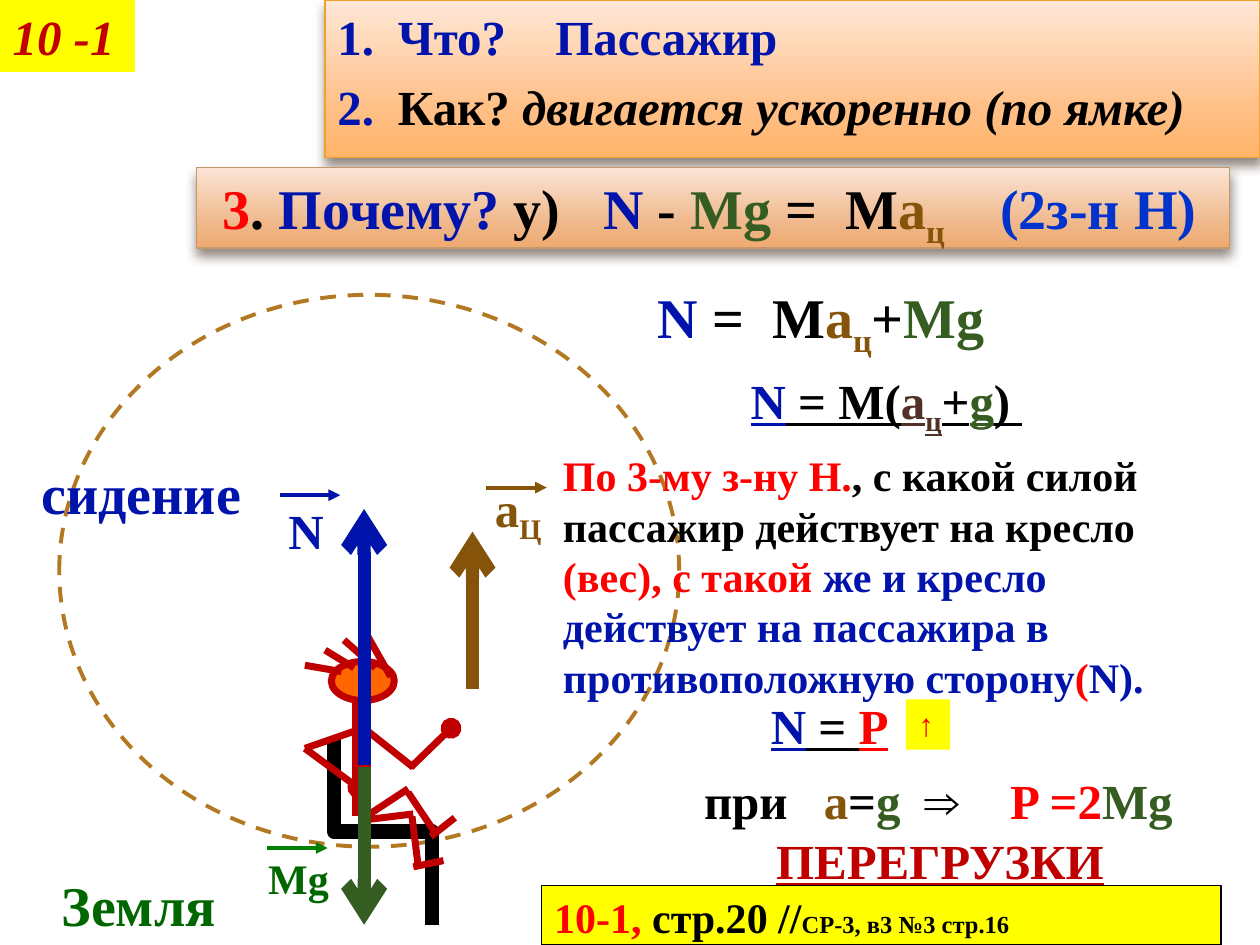
from lxml.etree import SubElement
from pptx import Presentation
from pptx.dml.color import RGBColor
from pptx.enum.dml import MSO_LINE
from pptx.enum.shapes import MSO_CONNECTOR, MSO_SHAPE
from pptx.enum.text import MSO_ANCHOR, PP_ALIGN
from pptx.oxml import parse_xml
from pptx.oxml.ns import nsdecls, qn
from pptx.util import Inches, Pt

FONT = "Times New Roman"
BLUE, RED, DARK, BLACK = "0014AC", "FF0000", "C00000", "000000"
GREEN, LEAF, BROWN, YELLOW = "365D21", "006600", "85540A", "FFFF00"
SUB, ITALIC, UNDER = {"sub": True}, {"italic": True}, {"underline": True}


def color(value):
    return RGBColor.from_string(value)


def stroke(line, tint, width):
    line.color.rgb = color(tint)
    line.width = Pt(width)


def write(shape, paras, size, wrap=True, tabs=(), align=PP_ALIGN.LEFT, gap=0):
    """Fill a frame with paragraphs made of (text, colour, formats) runs."""
    frame = shape.text_frame
    frame.word_wrap = wrap
    frame.vertical_anchor = MSO_ANCHOR.TOP
    for i, runs in enumerate(paras):
        para = frame.paragraphs[0] if i == 0 else frame.add_paragraph()
        para.alignment = align
        if i and gap:
            para.space_before = Pt(gap)
        if tabs:
            stops = SubElement(para._p.get_or_add_pPr(), qn("a:tabLst"))
            for stop in tabs:
                SubElement(stops, qn("a:tab"), pos=str(Inches(stop)), algn="l")
        for words, tint, *extra in runs:
            run = para.add_run()
            run.text = words
            look = {"name": FONT, "size": Pt(size), "bold": True}
            look.update(extra[0] if extra else {})
            if look.pop("sub", False):
                run._r.get_or_add_rPr().set("baseline", "-25000")
            for key, value in look.items():
                setattr(run.font, key, value)
            run.font.color.rgb = color(tint)


def label(slide, box, paras, size, **style):
    shape = slide.shapes.add_textbox(*map(Inches, box))
    write(shape, paras, size, **style)


def form(slide, kind, box, fill=None, line=None, width=1):
    shape = slide.shapes.add_shape(kind, *map(Inches, box))
    shape.shadow.inherit = False
    if fill:
        shape.fill.solid()
        shape.fill.fore_color.rgb = color(fill)
    else:
        shape.fill.background()
    if line:
        stroke(shape.line, line, width)
    else:
        shape.line.fill.background()
    return shape


def panel(slide, box, shades, edge):
    """Rectangle with a vertical three-stop gradient and a soft shadow."""
    shape = form(slide, MSO_SHAPE.RECTANGLE, box, "FFFFFF", edge, 0.79)
    props = shape._element.spPr
    stops = "".join(f'<a:gs pos="{pos}000"><a:srgbClr val="{tint}"/></a:gs>'
                    for pos, tint in zip((0, 72, 100), shades))
    props.replace(props.find(qn("a:solidFill")), parse_xml(
        f'<a:gradFill {nsdecls("a")}><a:gsLst>{stops}</a:gsLst>'
        '<a:lin ang="5400000" scaled="0"/></a:gradFill>'))
    props.find(qn("a:effectLst")).append(parse_xml(
        f'<a:outerShdw {nsdecls("a")} blurRad="{Pt(6)}" dist="{Pt(4)}" '
        'dir="5400000" rotWithShape="0"><a:srgbClr val="4E3B30">'
        '<a:alpha val="60000"/></a:srgbClr></a:outerShdw>'))
    return shape


def link(slide, ends, tint, width, head=None, tail=None,
         kind=MSO_CONNECTOR.STRAIGHT):
    line = slide.shapes.add_connector(kind, *map(Inches, ends))
    stroke(line.line, tint, width)
    pen = line.line._get_or_add_ln()
    for tag, tip in (("a:headEnd", head), ("a:tailEnd", tail)):
        if tip:
            SubElement(pen, qn(tag), type=tip)
    SubElement(line._element.spPr, qn("a:effectLst"))
    return line


def vector(slide, box, runs, size, start, tint):
    """Symbol with a small arrow above it."""
    label(slide, box, [runs], size)
    x, y = start
    link(slide, (x, y, x + 0.48, y), tint, 2.25, tail="triangle")


def rider(slide):
    form(slide, MSO_SHAPE.OVAL, (2.63, 5.25, 0.5, 0.31), "FF6600", DARK, 4)
    link(slide, (2.87, 5.53, 2.87, 6.48), DARK, 10.5)
    # Hands end in a dot
    link(slide, (3.58, 5.78, 3.26, 6.09), DARK, 4, head="oval")
    link(slide, (2.42, 5.94, 2.84, 6.25), DARK, 4, tail="oval")
    limbs = [
        (2.85, 5.79, 2.42, 5.94), (2.89, 5.78, 3.28, 6.09),  # arms
        (2.42, 5.28, 2.71, 5.33), (2.58, 5.16, 2.81, 5.3),  # hair
        (2.73, 5.08, 2.98, 5.3), (2.89, 5, 3.1, 5.37),
        (2.87, 6.51, 3.28, 6.46), (3.27, 6.48, 3.32, 6.88),  # legs
        (3.52, 6.83, 3.28, 6.88), (2.89, 6.49, 3.24, 6.26),
        (3.24, 6.29, 3.46, 6.62), (3.61, 6.49, 3.42, 6.64)]
    for ends in limbs:
        link(slide, ends, DARK, 4)


def scene(slide):
    orbit = form(slide, MSO_SHAPE.OVAL, (0.47, 2.34, 4.92, 4.38),
                 line="B27822", width=2.25)
    orbit.line.dash_style = MSO_LINE.DASH
    # Seat: an elbow turned on its side
    seat = link(slide, (3.78, 6.21, 2.3, 6.99), BLACK, 8.25,
                kind=MSO_CONNECTOR.ELBOW)
    seat._element.spPr.find(qn("a:xfrm")).set("rot", str(270 * 60000))
    rider(slide)


def forces(slide):
    for ends, tint in (((2.89, 6.09, 2.89, 7.34), GREEN),
                       ((2.89, 6.07, 2.89, 4.04), BLUE),
                       ((3.75, 5.47, 3.75, 4.22), BROWN)):
        link(slide, ends, tint, 7.5, tail="arrow")
    vector(slide, (2.03, 6.72, 0.78, 0.5), [("Mg", LEAF)], 24,
           (2.12, 6.73), "008000")
    vector(slide, (2.19, 3.92, 0.78, 0.57), [("N", BLUE)], 28,
           (2.22, 3.93), BLUE)
    vector(slide, (3.83, 3.75, 0.78, 0.57),
           [("а", BROWN), ("Ц", BROWN, SUB)], 28, (3.86, 3.87), BROWN)
    label(slide, (0.39, 6.86, 1.72, 0.64), [[("Земля", LEAF)]], 32)
    label(slide, (0.23, 3.59, 1.95, 0.64), [[("сидение", BLUE)]], 32)


def panels(slide):
    task = panel(slide, (2.58, 0, 7.42, 1.25),
                 ("FFE7D7", "FFBE84", "FFB468"), "F0A22E")
    write(task, [[("1.\tЧто?\tПассажир", BLUE)],
                 [("2.\t", BLUE), ("Как?", BLACK),
                  (" двигается ускоренно (по ямке)", BLACK, ITALIC)]],
          28, tabs=(0.48, 1.73), gap=6.7)
    law = panel(slide, (1.56, 1.33, 8.2, 0.64),
                ("FAE4D5", "EFB688", "EFAA6F"), "C3986D")
    write(law, [[(" 3", RED), (". ", BLACK), ("Почему? ", BLUE),
                 ("y)\t", BLACK), ("N", BLUE), (" - ", BLACK),
                 ("Mg", GREEN), (" =\tM", BLACK), ("a", BROWN),
                 ("ц\t", BROWN, SUB), ("(2з-н Н)", "0033CC")]],
          32, tabs=(3.13, 5.05, 6.28))


def proof(slide):
    label(slide, (5.12, 2.19, 4.22, 0.64),
          [[("N", BLUE), (" =\tM", BLACK), ("a", BROWN), ("ц", BROWN, SUB),
            ("+", BLACK), ("Mg", GREEN)]], 32, tabs=(0.91,))
    label(slide, (5.86, 2.89, 2.5, 0.57),
          [[("N", BLUE, UNDER), (" = M(", BLACK, UNDER),
            ("a", "523227", UNDER), ("ц", "523227", {**SUB, **UNDER}),
            ("+", BLACK, UNDER), ("g", GREEN, UNDER),
            (") ", BLACK, UNDER)]], 28)
    label(slide, (4.37, 3.52, 4.96, 2.12),
          [[("По 3-му з-ну Н.", RED),
            (", с какой силой пассажир действует на кресло ", BLACK),
            ("(вес), с такой ", RED),
            ("же и кресло действует на пассажира в "
             "противоположную сторону", BLUE),
            ("(", RED), ("N).", BLUE)]], 24)
    label(slide, (6.02, 5.47, 1.17, 0.57),
          [[("N", BLUE, UNDER), (" = ", BLACK, UNDER), ("P", RED, UNDER)]], 28)
    rise = form(slide, MSO_SHAPE.RECTANGLE, (7.19, 5.55, 0.35, 0.4), YELLOW)
    write(rise, [[("↑", RED)]], 18, wrap=False)
    # Result: formula on tab stops, centred word below it
    box = (5.31, 6.07, 4.3, 0.57)
    label(slide, box,
          [[("\tпри\t", BLACK), ("a", BROWN), ("=", BLACK), ("g\t", GREEN),
            ("⇒\t", BLACK), ("P =2", RED), ("Mg", GREEN)]],
          28, tabs=(0.18, 1.13, 1.93, 2.61))
    label(slide, (5.31, 6.54, 4.3, 0.57),
          [[("ПЕРЕГРУЗКИ", DARK, UNDER)]], 28, align=PP_ALIGN.CENTER)


def main():
    deck = Presentation()
    deck.slide_width, deck.slide_height = Inches(10), Inches(7.5)
    slide = deck.slides.add_slide(deck.slide_layouts[5])
    # Slide number as the title
    title = slide.shapes.title
    spot = dict(zip(("left", "top", "width", "height"), (0, 0, 1.07, 0.57)))
    for key, value in spot.items():
        setattr(title, key, Inches(value))
    title.fill.solid()
    title.fill.fore_color.rgb = color(YELLOW)
    write(title, [[("10 -1", DARK, ITALIC)]], 28)
    scene(slide)
    panels(slide)
    forces(slide)
    proof(slide)
    # Homework
    note = form(slide, MSO_SHAPE.RECTANGLE, (4.3, 7.03, 5.39, 0.47),
                YELLOW, BLACK, 0.75)
    write(note, [[("10-1, ", RED), ("стр.20 //", BLACK),
                  ("СР-3, в3 №3 стр.16", BLACK, {"size": Pt(14)})]], 24)
    deck.save("out.pptx")


if __name__ == "__main__":
    main()
